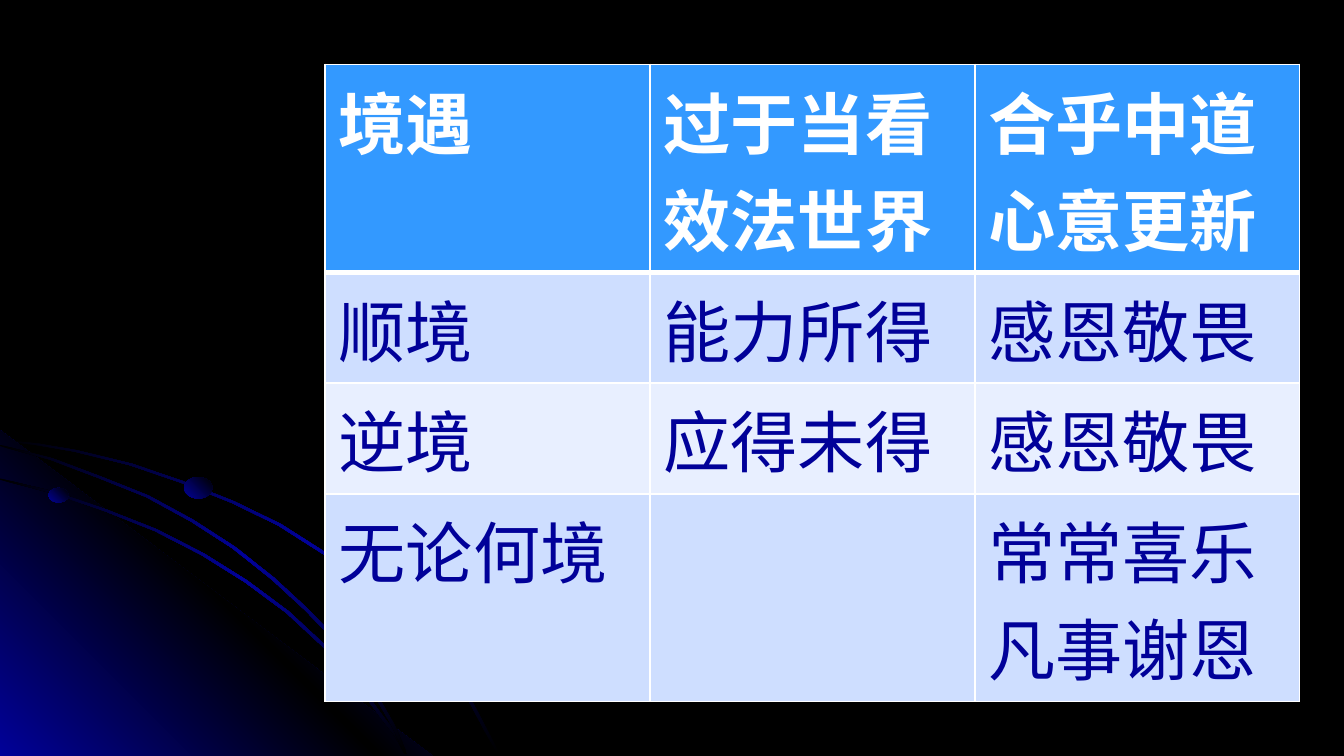
from dataclasses import dataclass

from lxml.etree import SubElement as Sub
from pptx import Presentation
from pptx.dml.color import RGBColor as RGB
from pptx.enum.shapes import MSO_SHAPE as Shape
from pptx.oxml import parse_xml
from pptx.oxml.ns import nsdecls, qn
from pptx.util import Inches, Pt

WIDE = 10
HIGH = WIDE * 9 / 16


@dataclass(frozen=True)
class Theme:
    font: str = "Arial"
    size: int = 36
    back: str = "000000"
    navy: str = "010199"
    white: str = "FFFFFF"
    head: str = "3399FF"
    bands: tuple = ("CEDEFF", "E8EFFF")
    thin: int = 1
    thick: int = 3


def write(frame, text, *, font, size, color, bold=False):
    """Fill a text frame, one paragraph for each line of text."""
    for i, line in enumerate(text.split("\n")):
        para = frame.paragraphs[0] if i == 0 else frame.add_paragraph()
        run = para.add_run()
        run.text = line
        run.font.name = font
        run.font.size = Pt(size)
        run.font.bold = bold
        run.font.color.rgb = RGB.from_string(color)


def shade(shape, colors, angle):
    """Give evenly spaced gradient stops, with a clockwise angle in degrees."""
    shape.shadow.inherit = False
    shape.line.fill.background()
    step = 100000 // (len(colors) - 1)
    stops = "".join(
        f'<a:gs pos="{i * step}"><a:srgbClr val="{color}"/></a:gs>'
        for i, color in enumerate(colors))
    grad = parse_xml(
        f'<a:gradFill {nsdecls("a")} rotWithShape="1"><a:gsLst>{stops}</a:gsLst>'
        f'<a:lin ang="{angle * 60000}" scaled="1"/></a:gradFill>')
    line = shape.element.spPr.find(qn("a:ln"))
    line.addprevious(grad)


def edge(cell, side, color, width):
    """Add one cell border; call in the order L, R, T, B before the fill."""
    line = Sub(cell._tc.get_or_add_tcPr(), qn(f"a:ln{side}"), w=str(Pt(width)))
    Sub(Sub(line, qn("a:solidFill")), qn("a:srgbClr"), val=color)


class Deck:
    def __init__(self, theme):
        self.theme = theme
        self.file = Presentation()
        self.file.slide_width = Inches(WIDE)
        self.file.slide_height = Inches(HIGH)
        self.slide = self.file.slides.add_slide(self.file.slide_layouts[6])
        fill = self.slide.background.fill
        fill.solid()
        fill.fore_color.rgb = RGB.from_string(theme.back)

    def outline(self, points, colors, angle):
        spots = [(Inches(x), Inches(y)) for x, y in points]
        pen = self.slide.shapes.build_freeform(*spots[0])
        pen.add_line_segments(spots[1:], close=True)
        shade(pen.convert_to_shape(), colors, angle)

    def ribbon(self, points, low=5.61):
        """Draw a thin arc from its upper edge and that edge moved down left."""
        under = [(max(0, x - 0.02), min(low, y + 0.01)) for x, y in points]
        t = self.theme
        self.outline(points + under[::-1], (t.back, t.navy, t.back), 45)

    def bead(self, x, y, wide, high, angle):
        dot = self.slide.shapes.add_shape(
            Shape.OVAL, Inches(x), Inches(y), Inches(wide), Inches(high))
        shade(dot, (self.theme.navy, self.theme.back), angle)

    def table(self, rows, x, y, wide, high):
        """Place a table whose rows grow from an even height to fit the text."""
        t = self.theme
        grid = self.slide.shapes.add_table(
            len(rows), len(rows[0]), Inches(x), Inches(y),
            Inches(wide), Inches(high)).table
        for r, row in enumerate(rows):
            top = r == 0
            for c, text in enumerate(row):
                cell = grid.cell(r, c)
                widths = {"L": t.thin, "R": t.thin,
                          "T": t.thick if r == 1 else t.thin,
                          "B": t.thick if top else t.thin}
                for side, width in widths.items():
                    edge(cell, side, t.white, width)
                cell.fill.solid()
                cell.fill.fore_color.rgb = RGB.from_string(
                    t.head if top else t.bands[(r - 1) % 2])
                if text:
                    write(cell.text_frame, text, font=t.font, size=t.size,
                          color=t.white if top else t.navy, bold=top)


OUTER = [(0, 3.27), (0.28, 3.3), (0.57, 3.35), (0.98, 3.45), (1.36, 3.58),
         (1.74, 3.73), (2.09, 3.9), (2.42, 4.11), (2.72, 4.33), (3, 4.58),
         (3.25, 4.86), (3.39, 5.04), (3.52, 5.23), (3.62, 5.42), (3.72, 5.61)]
INNER = [(0, 3.56), (0.41, 3.66), (0.79, 3.79), (1.17, 3.94), (1.52, 4.12),
         (1.84, 4.32), (2.15, 4.55), (2.42, 4.8), (2.66, 5.07), (2.86, 5.34),
         (2.96, 5.47), (3.03, 5.61)]
MIDDLE = [(0, 3.31), (0.39, 3.41), (0.76, 3.55), (1.11, 3.69), (1.44, 3.87),
          (1.75, 4.07), (2.04, 4.3), (2.29, 4.53), (2.54, 4.79), (2.69, 4.99),
          (2.82, 5.19), (2.94, 5.4), (3.03, 5.61)]
GLOW = [(3.22, HIGH), (0, HIGH), (0, 3.2)]
BEADS = [(0.36, 3.63, 0.15, 0.11, 315), (2.67, 5.06, 0.16, 0.12, 45),
         (1.37, 3.55, 0.21, 0.16, 315)]
ROWS = [("境遇", "过于当看\n效法世界", "合乎中道心意更新"),
        ("顺境", "能力所得", "感恩敬畏"),
        ("逆境", "应得未得", "感恩敬畏"),
        ("无论何境", "", "常常喜乐\n凡事谢恩")]


def main():
    theme = Theme()
    deck = Deck(theme)
    deck.ribbon(OUTER)
    deck.outline(GLOW, (theme.navy, theme.back, theme.navy), 315)
    for arc in (INNER, MIDDLE):
        deck.ribbon(arc)
    for bead in BEADS:
        deck.bead(*bead)
    deck.table(ROWS, 2.42, 0.48, 7.25, 3.08)
    deck.file.save("out.pptx")


if __name__ == "__main__":
    main()
